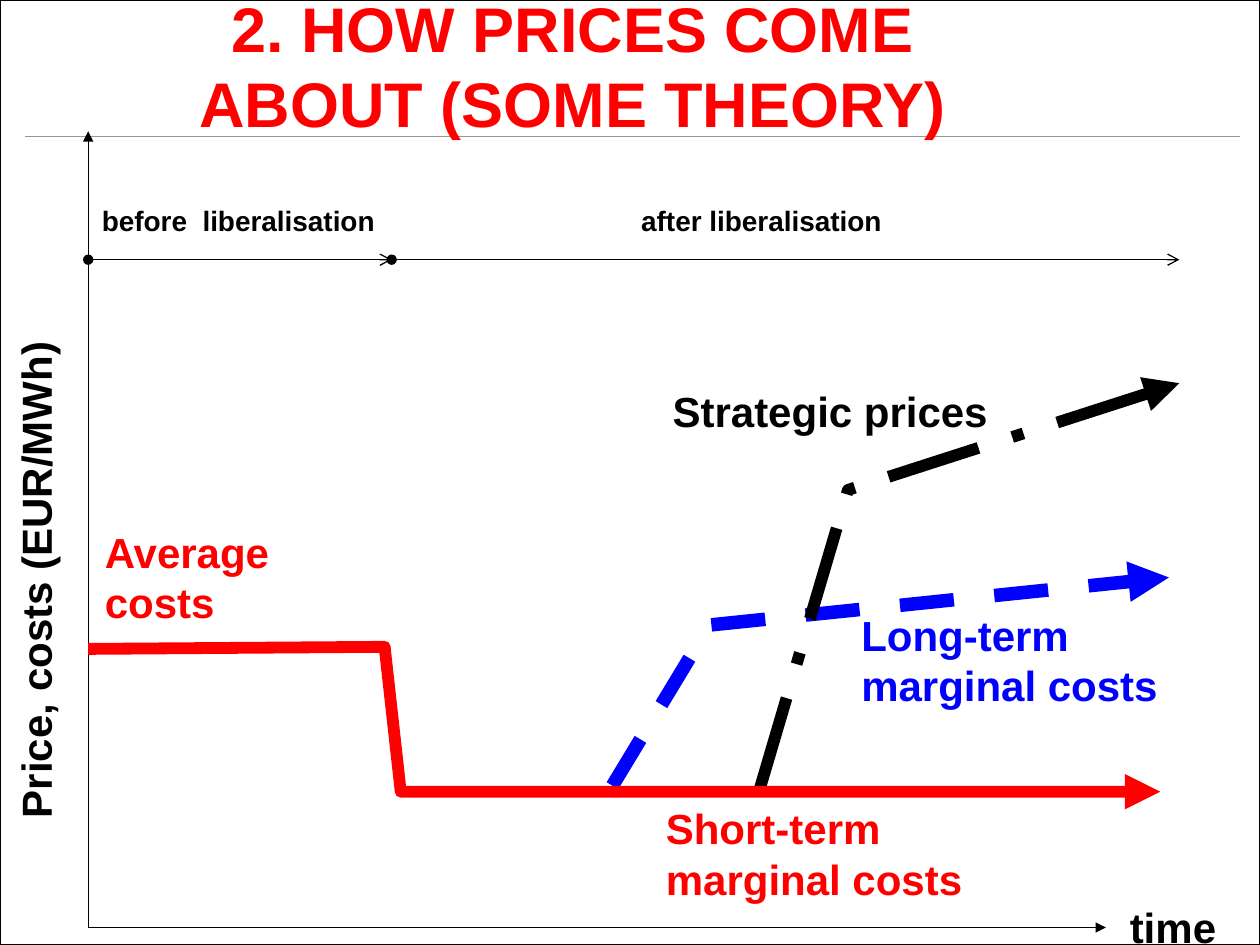
from lxml.etree import SubElement
from pptx import Presentation
from pptx.dml.color import RGBColor
from pptx.enum.dml import MSO_LINE
from pptx.enum.shapes import MSO_CONNECTOR, MSO_SHAPE
from pptx.enum.text import MSO_ANCHOR, MSO_AUTO_SIZE, PP_ALIGN
from pptx.oxml.ns import qn
from pptx.util import Pt

COLORS = {"black": "000000", "white": "FFFFFF", "grey": "969696",
          "red": "FF0000", "blue": "0000FF"}


def style_line(shape, color, width, head="none", tail="none", dash=None):
    """Set the stroke, its dash and the arrowheads at its start and end."""
    shape.line.color.rgb = RGBColor.from_string(COLORS[color])
    shape.line.width = Pt(width)
    if dash:
        shape.line.dash_style = dash
    stroke = shape.line._get_or_add_ln()
    SubElement(stroke, qn("a:round"))
    SubElement(stroke, qn("a:headEnd"), type=head)
    SubElement(stroke, qn("a:tailEnd"), type=tail)


def add_label(text, left, top, width, height, size, color):
    box = slide.shapes.add_textbox(Pt(left), Pt(top), Pt(width), Pt(height))
    frame = box.text_frame
    frame.text = text
    frame.word_wrap = False
    frame.auto_size = MSO_AUTO_SIZE.SHAPE_TO_FIT_TEXT
    for paragraph in frame.paragraphs:
        paragraph.font.name = "Arial"
        paragraph.font.size = Pt(size)
        paragraph.font.bold = True
        paragraph.font.color.rgb = RGBColor.from_string(COLORS[color])
    return box


prs = Presentation()
prs.slide_width, prs.slide_height = Pt(720), Pt(540)
slide = prs.slides.add_slide(prs.slide_layouts[6])

border = slide.shapes.add_shape(MSO_SHAPE.RECTANGLE, 0, 0, Pt(720), Pt(540))
border.shadow.inherit = False
border.fill.solid()
border.fill.fore_color.rgb = RGBColor.from_string(COLORS["white"])
style_line(border, "black", 0.75)

# Title rule, axes and the two periods
origin_x, origin_y = 50.4, 530
period_y, liberalisation_x, period_end = 148.4, 223.8, 673.9
straight_lines = [
    (14.4, 78, 708.5, 78, "grey", "none", "none"),
    (origin_x, origin_y, 632, origin_y, "black", "none", "triangle"),
    (origin_x, origin_y, origin_x, 75, "black", "none", "triangle"),
    (liberalisation_x, period_y, period_end, period_y, "black", "oval", "arrow"),
    (origin_x, period_y, liberalisation_x, period_y, "black", "oval", "arrow"),
]
for x1, y1, x2, y2, color, head, tail in straight_lines:
    line = slide.shapes.add_connector(MSO_CONNECTOR.STRAIGHT, Pt(x1), Pt(y1), Pt(x2), Pt(y2))
    style_line(line, color, 0.75, head, tail)
    SubElement(line._element.spPr, qn("a:effectLst"))

# Long-term costs, strategic prices, average and short-term costs
curves = [
    ([(350, 449), (405.5, 357.2), (668, 330)], "blue", 7.75, MSO_LINE.DASH),
    ([(434.2, 450.7), (484.6, 280), (673.9, 219)], "black", 6.75, MSO_LINE.LONG_DASH_DOT),
    ([(origin_x, 370.8), (219.8, 369.6), (229, 452.4), (663, 452.4)], "red", 6.75, None),
]
for points, color, width, dash in curves:
    start, *rest = [(Pt(x), Pt(y)) for x, y in points]
    builder = slide.shapes.build_freeform(*start)
    builder.add_line_segments(rest, close=False)
    curve = builder.convert_to_shape()
    curve.shadow.inherit = False
    curve.fill.background()
    style_line(curve, color, width, tail="triangle", dash=dash)

labels = [
    ("Short-term \vmarginal costs", 373.4, 455.2, 192, 65.5, 24, "red"),
    ("Long-term \vmarginal costs", 485.1, 344.5, 199, 65.5, 24, "blue"),
    ("Average\ncosts", 52.9, 297.3, 116, 65.5, 24, "red"),
    ("Strategic prices", 377.3, 217, 196.6, 36, 24, "black"),
    ("time", 638.5, 511.4, 71.3, 36, 24, "black"),
    ("after liberalisation", 359.3, 113, 154, 26.6, 16, "black"),
    ("before  liberalisation", 51.1, 113, 172.8, 26.6, 16, "black"),
]
for label in labels:
    add_label(*label)

price_axis_title = add_label("Price, costs (EUR/MWh)", -124.6, 311.8, 289.4, 36, 24, "black")
price_axis_title.rotation = 270

title = add_label("2. HOW PRICES COME \vABOUT (SOME THEORY) ", -36.7, -7.9, 738, 90, 36, "red")
title.text_frame.auto_size = MSO_AUTO_SIZE.NONE
title.text_frame.word_wrap = True
title.text_frame.vertical_anchor = MSO_ANCHOR.MIDDLE
title.text_frame.paragraphs[0].alignment = PP_ALIGN.CENTER

prs.save("out.pptx")
